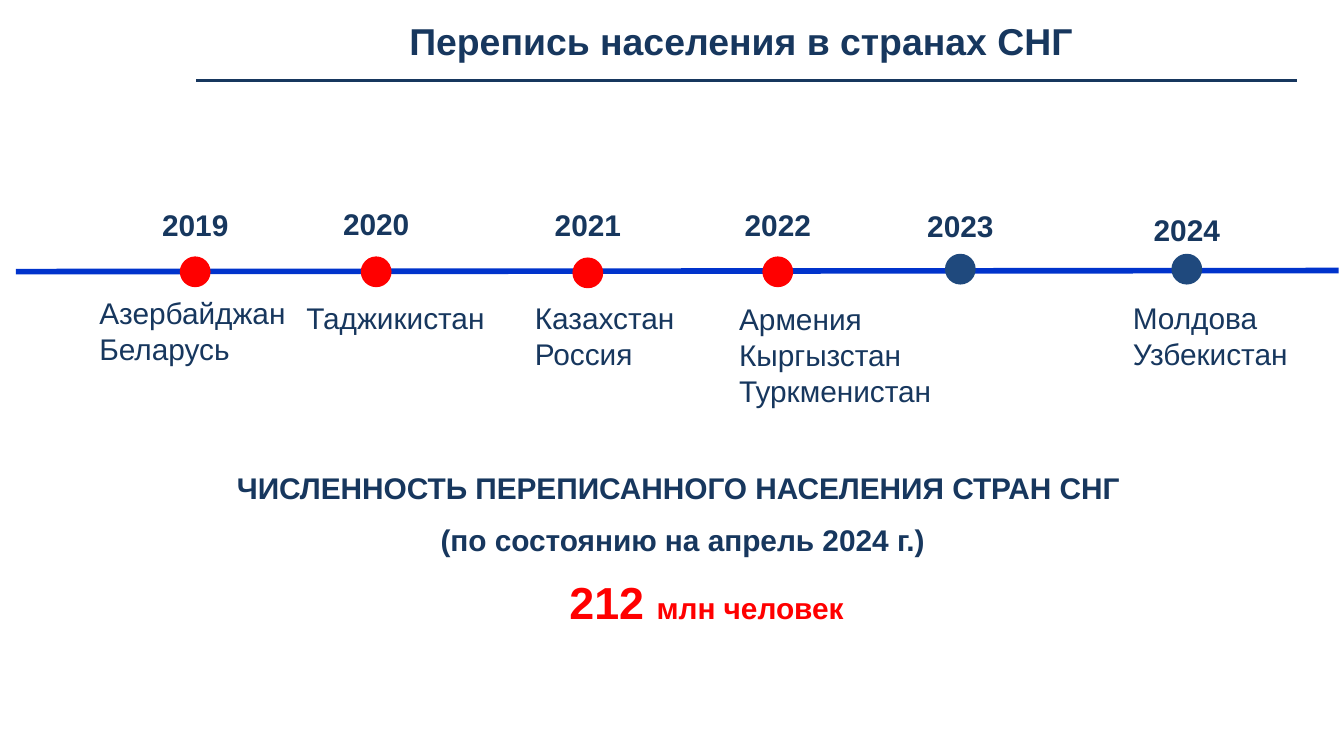
from pptx import Presentation
from pptx.dml.color import RGBColor
from pptx.enum.shapes import MSO_CONNECTOR, MSO_SHAPE
from pptx.enum.text import MSO_ANCHOR, PP_ALIGN
from pptx.oxml.ns import qn
from pptx.util import Cm, Pt
from lxml.etree import SubElement

NAVY, BLUE, RED, STEEL = "17375E", "0033CC", "FF0000", "1F497D"
rgb = RGBColor.from_string

prs = Presentation()
prs.slide_width, prs.slide_height = Cm(25.4), Cm(14.28)
s = prs.slides.add_slide(prs.slide_layouts[6])


def add_text(box, lines, size=16, color=NAVY, bold=True, align=PP_ALIGN.CENTER):
    """Each line is a list of run texts."""
    tf = s.shapes.add_textbox(*map(Cm, box)).text_frame
    tf.word_wrap = True
    for i, runs in enumerate(lines):
        p = tf.paragraphs[0] if i == 0 else tf.add_paragraph()
        p.alignment = align
        for text in runs:
            r = p.add_run()
            r.text = text
            r.font.name, r.font.size, r.font.bold = "Arial", Pt(size), bold
            r.font.color.rgb = rgb(color)
    return tf


def add_line(x1, y1, x2, y2, color, width):
    line = s.shapes.add_connector(MSO_CONNECTOR.STRAIGHT, *map(Cm, (x1, y1, x2, y2)))
    line.line.color.rgb = rgb(color)
    line.line.width = Pt(width)
    SubElement(line._element.spPr, qn("a:effectLst"))


# Title with its rule
tf = add_text((3.71, 0, 20.6, 1.52), [["Перепись населения в странах СНГ"]], size=20)
tf.vertical_anchor = MSO_ANCHOR.MIDDLE
add_line(3.71, 1.52, 24.51, 1.52, NAVY, 1.5)

# Timeline axis
add_line(0.3, 5.13, 25.3, 5.11, BLUE, 3)

# Years: centre x, label top, dot top, dot colour
DOT, YEAR_W = 0.51, 1.8
years = [
    ("2019", 3.69, 3.78, 4.88, RED),
    ("2020", 7.11, 3.76, 4.88, RED),
    ("2021", 11.11, 3.78, 4.9, RED),
    ("2022", 14.7, 3.78, 4.88, RED),
    ("2023", 18.15, 3.8, 4.83, STEEL),
    ("2024", 22.43, 3.88, 4.83, STEEL),
]
for year, x, label_y, dot_y, color in years:
    add_text((x - YEAR_W / 2, label_y, YEAR_W, 0.94), [[year]])
    sp = s.shapes.add_shape(MSO_SHAPE.FLOWCHART_CONNECTOR,
                            Cm(x - DOT / 2), Cm(dot_y), Cm(DOT), Cm(DOT))
    sp.shadow.inherit = False
    sp.fill.solid()
    sp.fill.fore_color.rgb = rgb(color)
    sp.line.color.rgb = rgb(color)
    sp.line.width = Pt(2)

# Countries under the years: left, top, width
countries = [
    (1.63, 5.44, 4.11, ["Азербайджан", "Беларусь"]),
    (5.54, 5.54, 4.14, ["Таджикистан"]),
    (9.86, 5.54, 3.23, ["Казахстан", "Россия"]),
    (13.72, 5.56, 4.24, ["Армения", "Кыргызстан", "Туркменистан"]),
    (21.16, 5.54, 3.51, ["Молдова", "Узбекистан"]),
]
for x, y, w, names in countries:
    add_text((x, y, w, 0.25 + 0.69 * len(names)), [[name] for name in names],
             bold=False, align=PP_ALIGN.LEFT)

# Population total
tf = add_text((0.51, 8.74, 24.79, 1.96),
              [["ЧИСЛЕННОСТЬ ПЕРЕПИСАННОГО НАСЕЛЕНИЯ СТРАН СНГ "],
               ["(по состоянию на апрель 2024 г.)"]])
tf.paragraphs[1].space_before = Pt(9)
tf = add_text((9.47, 10.74, 7.77, 1.27), [["212 ", "млн человек"]], color=RED)
tf.paragraphs[0].runs[0].font.size = Pt(24)

prs.save("out.pptx")
